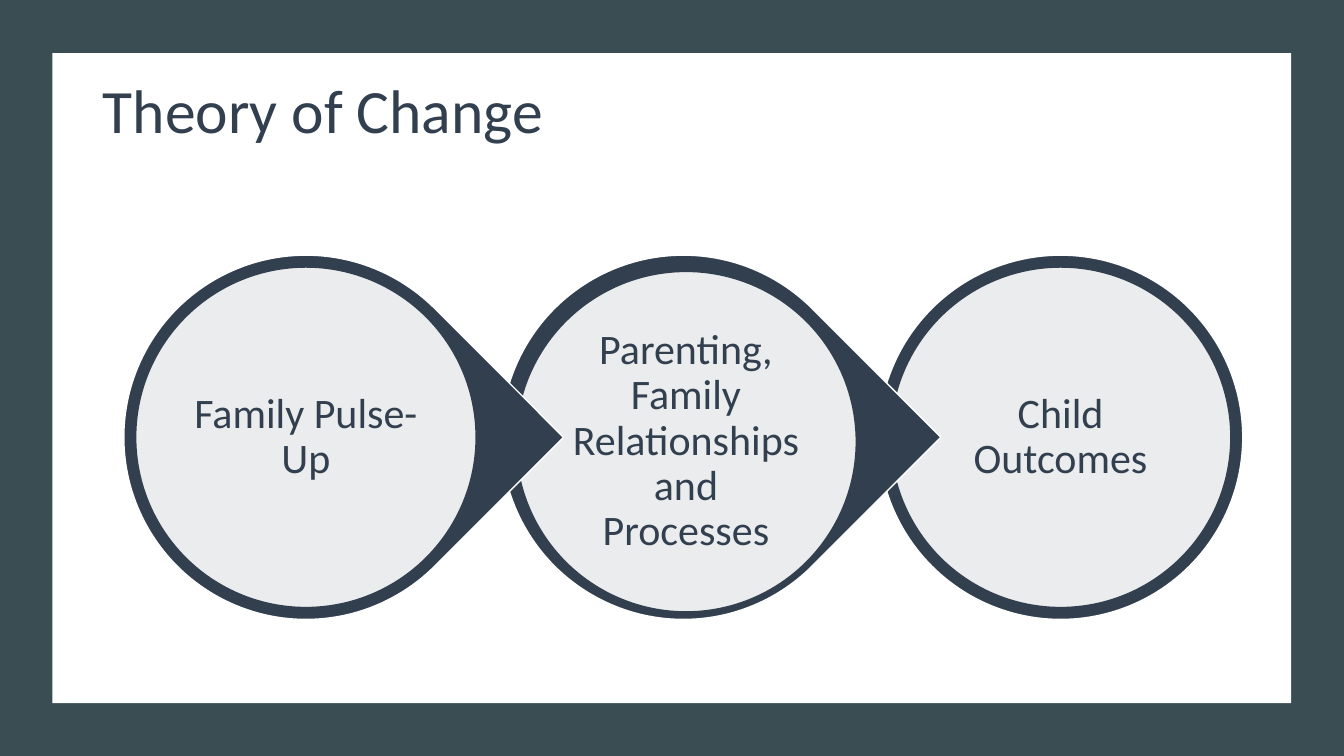
import pptx
import pptx.dml.color
import pptx.enum.shapes
import pptx.enum.text
import pptx.oxml.ns
import pptx.util
from dataclasses import dataclass
from lxml import etree

Cm = pptx.util.Cm
Pt = pptx.util.Pt
RGBColor = pptx.dml.color.RGBColor
Shape = pptx.enum.shapes.MSO_SHAPE
Align = pptx.enum.text.PP_ALIGN
qn = pptx.oxml.ns.qn


@dataclass(frozen=True)
class Theme:
    font: str = "Calibri"
    frame: RGBColor = RGBColor(0x39, 0x4D, 0x52)
    navy: RGBColor = RGBColor(0x32, 0x3F, 0x4F)
    white: RGBColor = RGBColor(0xFF, 0xFF, 0xFF)
    title_size: Pt = Pt(44)
    stage_size: Pt = Pt(30)


theme = Theme()


def add_filled(kind, left, top, width, height, fill, line=None):
    """Add a preset shape, measured in centimetres, with an optional 1 pt outline."""
    shape = slide.shapes.add_shape(kind, Cm(left), Cm(top), Cm(width), Cm(height))
    shape.shadow.inherit = False
    shape.fill.solid()
    shape.fill.fore_color.rgb = fill
    if line is None:
        shape.line.fill.background()
    else:
        shape.line.color.rgb = line
        shape.line.width = Pt(1)
    return shape


def write_text(shape, text, size, alignment):
    frame = shape.text_frame
    frame.word_wrap = True
    frame.vertical_anchor = pptx.enum.text.MSO_ANCHOR.MIDDLE
    paragraph = frame.paragraphs[0]
    paragraph.alignment = alignment
    paragraph.line_spacing = 0.9
    run = paragraph.add_run()
    run.text = text
    run.font.name = theme.font
    run.font.size = size
    run.font.color.rgb = theme.navy


presentation = pptx.Presentation()
presentation.slide_width = Cm(33.87)
presentation.slide_height = Cm(19.05)
slide = presentation.slides.add_slide(presentation.slide_layouts[6])

# Dark frame around a white panel
add_filled(Shape.RECTANGLE, 0, 0, 33.87, 19.05, theme.frame)
add_filled(Shape.RECTANGLE, 1.32, 1.34, 31.22, 16.38, theme.white)

# Stages, drawn from the last to the first so that each point overlaps the next ring
ring_size, disc_size = 9.18, 8.58
first_center, pitch, center_y = 7.71, 9.51, 11.02
stages = [
    # text, ring shape, disc offset right and down
    ("Family Pulse-Up", Shape.TEAR, 0, 0),
    ("Parenting, Family Relationships and Processes", Shape.TEAR, 0.07, 0.11),
    ("Child Outcomes", Shape.OVAL, 0, 0),
]
for index, (text, ring_kind, shift_x, shift_y) in reversed(list(enumerate(stages))):
    center_x = first_center + index * pitch
    ring = add_filled(ring_kind, center_x - ring_size / 2, center_y - ring_size / 2,
                      ring_size, ring_size, theme.navy, theme.white)
    if ring_kind == Shape.TEAR:
        ring.adjustments[0] = 1
        ring.rotation = 45

    disc = add_filled(Shape.OVAL, center_x + shift_x - disc_size / 2,
                      center_y + shift_y - disc_size / 2,
                      disc_size, disc_size, theme.white, theme.navy)
    fill_color = disc.element.spPr.find(qn("a:solidFill")).find(qn("a:srgbClr"))
    etree.SubElement(fill_color, qn("a:alpha"), val="90000")
    frame = disc.text_frame
    frame.margin_left = frame.margin_right = Cm(0.05)
    frame.margin_top = frame.margin_bottom = Cm(0.05)
    write_text(disc, text, theme.stage_size, Align.CENTER)

title = slide.shapes.add_textbox(Cm(2.34), Cm(1.02), Cm(29.21), Cm(3.68))
write_text(title, "Theory of Change", theme.title_size, Align.LEFT)

presentation.save("out.pptx")
